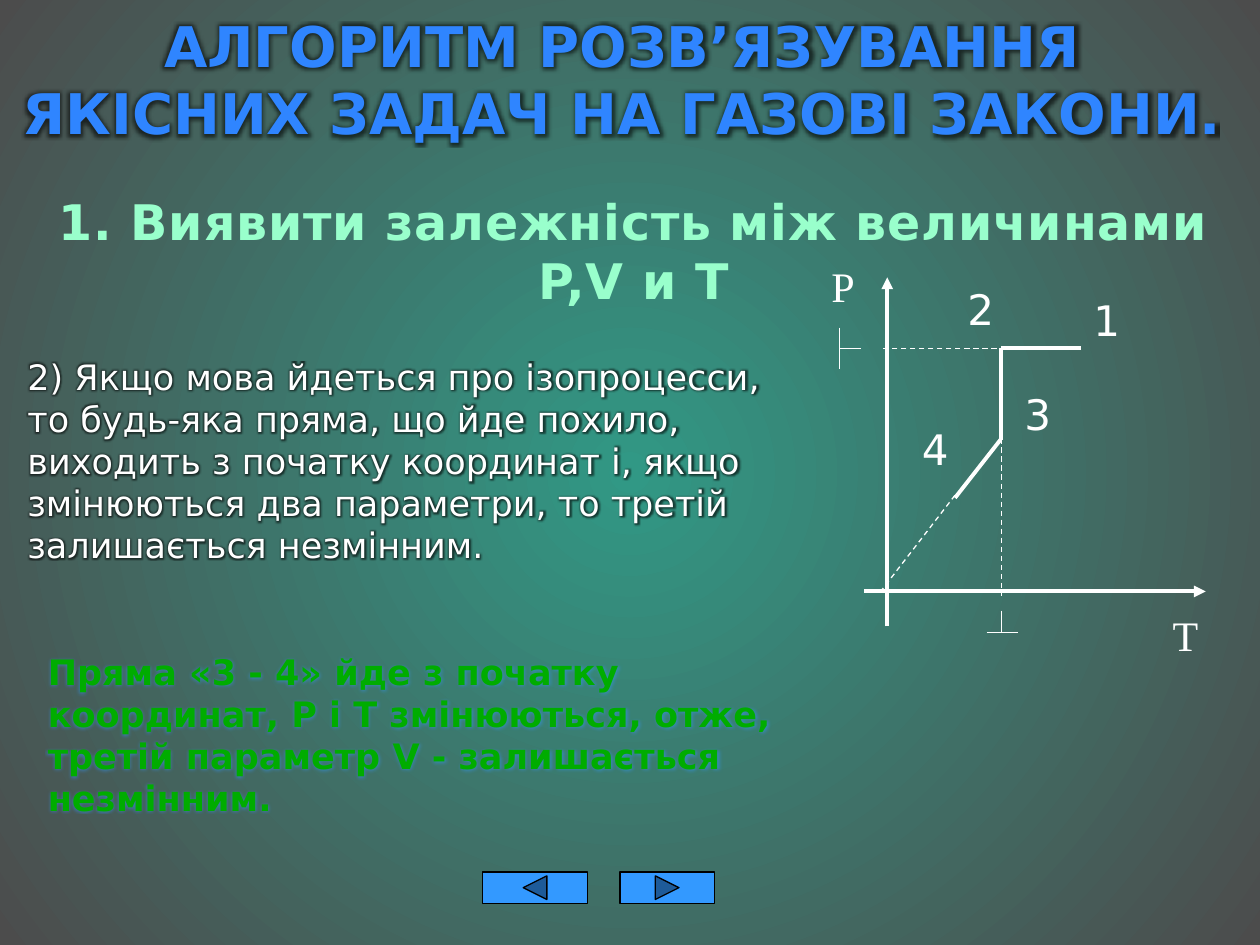
from dataclasses import dataclass
from itertools import pairwise

from lxml.etree import SubElement
from pptx import Presentation
from pptx.dml.color import RGBColor
from pptx.enum.dml import MSO_LINE
from pptx.enum.shapes import MSO_CONNECTOR, MSO_SHAPE
from pptx.enum.text import MSO_AUTO_SIZE, PP_ALIGN
from pptx.oxml.ns import qn
from pptx.util import Pt

SANS, SERIF = "DejaVu Sans", "Times New Roman"
WHITE, BLACK = "FFFFFF", "000000"
Point = tuple[float, float]


@dataclass
class Glow:
    color: str
    radius: float
    opacity: int


@dataclass
class Caption:
    text: str
    left: float
    top: float
    width: float
    height: float
    size: float = 24
    font: str = SANS
    color: str = WHITE
    bold: bool = False
    centered: bool = False
    spacing: float = 0
    glow: Glow | None = None


@dataclass
class Stroke:
    start: Point
    end: Point
    weight: float = 0.75
    dashed: bool = False
    arrow: bool = False


def rgb(color: str) -> RGBColor:
    return RGBColor.from_string(color)


def paint_background(slide, center: str, edge: str) -> None:
    fill = slide.background.fill
    fill.gradient()
    for stop, color, position in zip(fill.gradient_stops, (center, edge), (0, 1)):
        stop.color.rgb = rgb(color)
        stop.position = position
    gradient = slide.element.find(".//" + qn("a:gradFill"))
    gradient.remove(gradient.find(qn("a:lin")))
    circle = SubElement(gradient, qn("a:path"), path="circle")
    SubElement(circle, qn("a:fillToRect"), l="50000", t="50000", r="50000", b="50000")


def add_glow(run, glow: Glow) -> None:
    properties = run.font.fill and run._r.get_or_add_rPr()
    effects = SubElement(properties, qn("a:effectLst"))
    halo = SubElement(effects, qn("a:glow"), rad=str(int(Pt(glow.radius))))
    color = SubElement(halo, qn("a:srgbClr"), val=glow.color)
    SubElement(color, qn("a:alpha"), val=str(glow.opacity * 1000))
    # Effects stand right after the fill
    properties.find(qn("a:solidFill")).addnext(effects)


def add_caption(slide, caption: Caption) -> None:
    box = slide.shapes.add_textbox(Pt(caption.left), Pt(caption.top),
                                   Pt(caption.width), Pt(caption.height))
    frame = box.text_frame
    frame.word_wrap = True
    frame.auto_size = MSO_AUTO_SIZE.SHAPE_TO_FIT_TEXT
    paragraph = frame.paragraphs[0]
    paragraph.alignment = PP_ALIGN.CENTER if caption.centered else PP_ALIGN.LEFT
    run = paragraph.add_run()
    run.text = caption.text
    run.font.size = Pt(caption.size)
    run.font.name = caption.font
    run.font.bold = caption.bold
    run.font.color.rgb = rgb(caption.color)
    if caption.spacing:
        run._r.get_or_add_rPr().set("spc", str(int(caption.spacing * 100)))
    if caption.glow:
        add_glow(run, caption.glow)


def add_stroke(slide, stroke: Stroke) -> None:
    ends = [Pt(value) for value in (*stroke.start, *stroke.end)]
    connector = slide.shapes.add_connector(MSO_CONNECTOR.STRAIGHT, *ends)
    connector.line.color.rgb = rgb(WHITE)
    connector.line.width = Pt(stroke.weight)
    if stroke.dashed:
        connector.line.dash_style = MSO_LINE.DASH
    properties = connector._element.spPr
    if stroke.arrow:
        SubElement(properties.find(qn("a:ln")), qn("a:tailEnd"), type="triangle")
    SubElement(properties, qn("a:effectLst"))


def add_button(slide, kind: MSO_SHAPE, left: float, width: float) -> None:
    button = slide.shapes.add_shape(kind, Pt(left), Pt(498.25), Pt(width), Pt(18))
    button.shadow.inherit = False
    button.fill.solid()
    button.fill.fore_color.rgb = rgb("3399FF")
    button.line.color.rgb = rgb(BLACK)
    button.line.width = Pt(0.75)


# Process 1-2-3-4 on the P-T diagram
PROCESS = [(617.75, 199), (571.75, 199), (571.75, 251.25), (545.75, 284.5)]
BOLD = 2.25

STROKES = [
    # Axes
    Stroke((507, 358), (507, 158.5), BOLD, arrow=True),
    Stroke((494, 338), (689, 338), BOLD, arrow=True),
    # Process
    *(Stroke(start, end, BOLD) for start, end in pairwise(PROCESS)),
    # Projections to the axes and the origin
    Stroke((569.5, 199.25), (504, 199.25), dashed=True),
    Stroke((572.5, 250.5), (572.5, 340.5), dashed=True),
    Stroke((545.75, 283), (504, 337), dashed=True),
    # Perpendicular signs
    Stroke((479.75, 187.25), (479.75, 211)),
    Stroke((479.75, 199.25), (491.75, 199.25)),
    Stroke((572.5, 349), (572.5, 361.25)),
    Stroke((563.75, 361.25), (581.75, 361.25)),
]

CAPTIONS = [
    # Rule and conclusion
    Caption("2) Якщо мова йдеться про ізопроцесси, то будь-яка пряма, що йде похило, "
            "виходить з початку координат і, якщо змінюються два параметри, то третій "
            "залишається незмінним.",
            8.6, 199.5, 438, 128, 20, glow=Glow(BLACK, 4, 60)),
    Caption("Пряма «3 - 4» йде з початку координат, P і T змінюються, отже, "
            "третій параметр V - залишається незмінним.",
            20.2, 368, 442, 104.5, 20, color="00AC00", bold=True,
            glow=Glow("3399FF", 4, 45)),
    # Axis names
    Caption("T", 663, 345, 32.4, 36, font=SERIF),
    Caption("P", 468, 145.5, 32.4, 36, font=SERIF),
    # State numbers
    Caption("1", 617.75, 165, 39, 36),
    Caption("2", 545.75, 158.5, 39, 36),
    Caption("3", 578.25, 218.25, 45.4, 36),
    Caption("4", 519.75, 238.25, 26, 36),
    # Headings
    Caption("АЛГОРИТМ РОЗВ’ЯЗУВАННЯ ЯКІСНИХ ЗАДАЧ НА ГАЗОВІ ЗАКОНИ.",
            0, 2.9, 711.4, 85, 32, color="2F85FF", bold=True, centered=True,
            glow=Glow(BLACK, 6, 60)),
    Caption("1. Виявити залежність між величинами P,V и T",
            2.2, 105.8, 720, 75, 28, color="99FFCC", bold=True, centered=True,
            spacing=0.5),
]


def main() -> None:
    presentation = Presentation()
    presentation.slide_width, presentation.slide_height = Pt(720), Pt(540)
    slide = presentation.slides.add_slide(presentation.slide_layouts[6])
    paint_background(slide, "319885", "4C4C4C")
    for stroke in STROKES:
        add_stroke(slide, stroke)
    for caption in CAPTIONS:
        add_caption(slide, caption)
    # Navigation
    add_button(slide, MSO_SHAPE.ACTION_BUTTON_BACK_OR_PREVIOUS, 275.75, 60)
    add_button(slide, MSO_SHAPE.ACTION_BUTTON_FORWARD_OR_NEXT, 354.25, 54)
    presentation.save("out.pptx")


if __name__ == "__main__":
    main()
